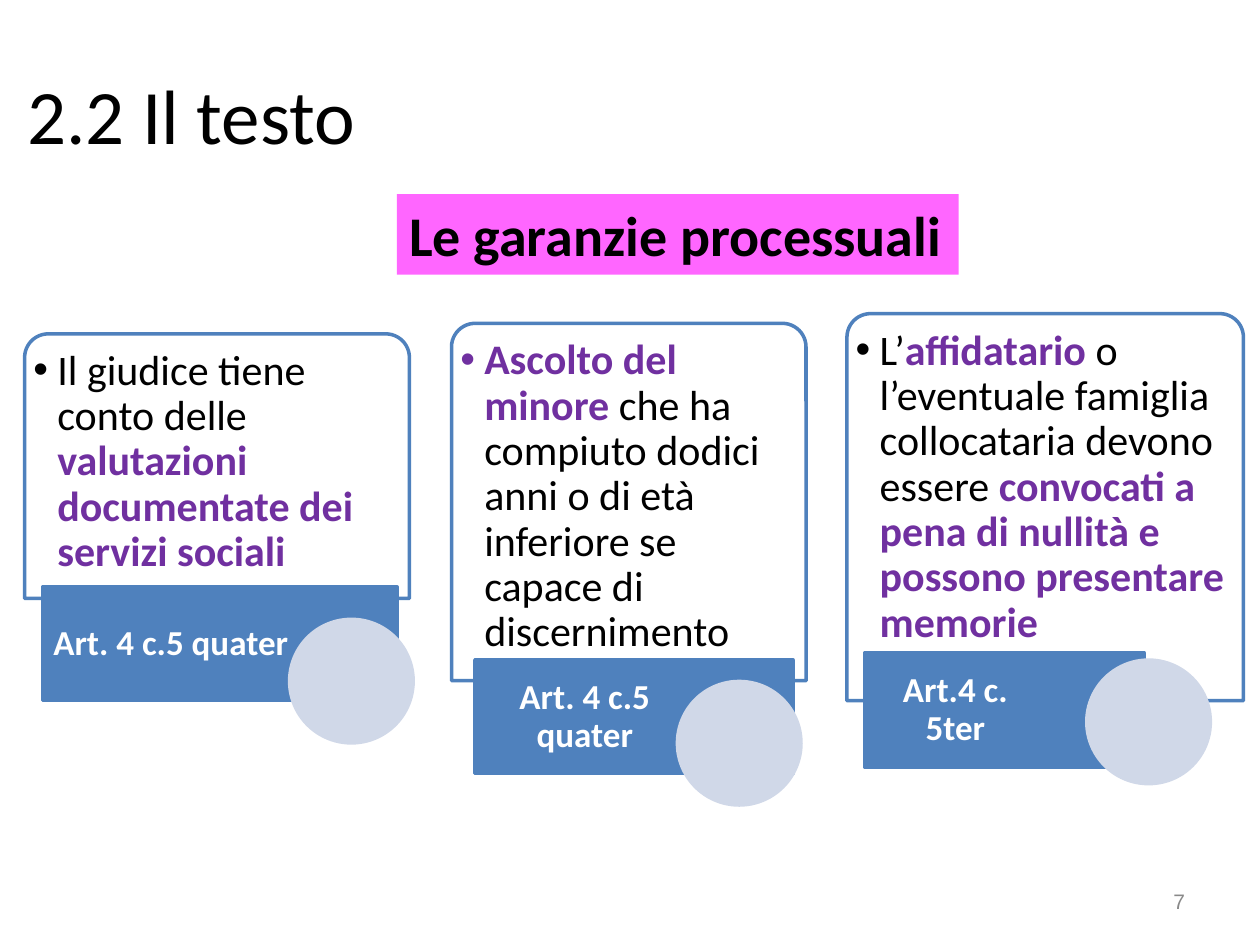
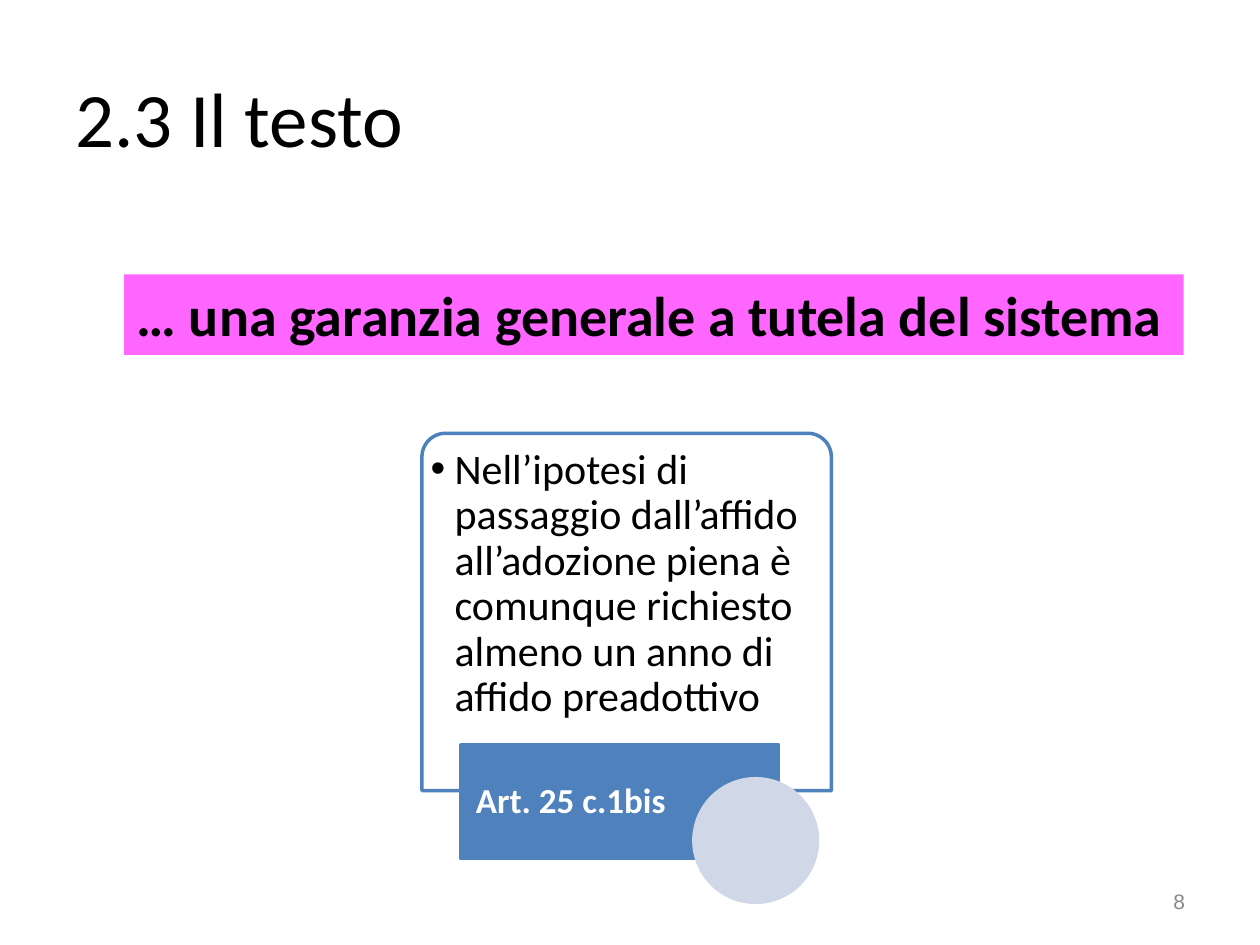
from lxml import etree
from pptx import Presentation
from pptx.dml.color import RGBColor
from pptx.enum import shapes, text
from pptx.oxml import ns
from pptx.util import Pt

BLACK, WHITE, GREY = "000000", "FFFFFF", "898989"
BLUE, PALE, PURPLE, PINK = "4F81BD", "D0D8E8", "7030A0", "FF66FF"

SLIDES = [
    {
        "title": "2.2 Il testo", "title_at": (8.6, 20.2), "number": "7",
        "heading": "Le garanzie processuali", "heading_at": (226.8, 110.9, 321.1, 46),
        "cards": [
            {"at": (14.1, 190.8, 219.9, 151.2),
             "body": [("Il giudice tiene conto delle ", False),
                      ("valutazioni documentate dei servizi sociali", True)],
             "article": "Art. 4 c.5 quater", "article_at": (24.3, 335.4, 202.7),
             "disc_at": (165.5, 353.9)},
            {"at": (258, 184.8, 202.6, 204.2),
             "body": [("Ascolto del minore ", True),
                      ("che ha compiuto dodici anni o di età inferiore "
                       "se capace di discernimento", False)],
             "article": "Art. 4 c.5 quater", "article_at": (271.3, 377.1, 181.8),
             "disc_at": (387.1, 389.4)},
            {"at": (484, 179.2, 226.6, 221.2),
             "body": [("L’", False), ("affidatario", True),
                      (" o l’eventuale famiglia collocataria devono essere ", False),
                      ("convocati a pena di nullità e possono presentare memorie", True)],
             "article": "Art.4 c. 5ter", "article_at": (494, 373.2, 160),
             "disc_at": (621, 377.2)},
        ],
    },
    {
        "title": "2.3 Il testo", "title_at": (36, 21.6), "number": "8",
        "heading": "… una garanzia generale a tutela del sistema",
        "heading_at": (70.9, 156.8, 605.5, 46),
        "cards": [
            {"at": (241.1, 247.6, 234, 204.2),
             "body": [("Nell’ipotesi di passaggio dall’affido all’adozione piena è "
                       "comunque richiesto almeno un anno di affido preadottivo", False)],
             "article": "Art. 25 c.1bis", "article_at": (263.5, 425.6, 181.4),
             "disc_at": (396.5, 445)},
        ],
    },
]

TITLE_SIZE = (648, 90)
NUMBER_AT = (516.2, 500.4, 168, 28.8)
ARTICLE_HEIGHT, DISC = 65, 70.6
RADIUS = 13.5
INDENT = 13.7


def rgb(color):
    return RGBColor.from_string(color)


def style(run, size, color, bold=False, face="Calibri"):
    run.font.size, run.font.bold, run.font.name = Pt(size), bold, face
    run.font.color.rgb = rgb(color)


def place(slide, kind, box, fill, line=None):
    shape = slide.shapes.add_shape(kind, *map(Pt, box))
    shape.shadow.inherit = False
    shape.fill.solid()
    shape.fill.fore_color.rgb = rgb(fill)
    if line:
        shape.line.color.rgb, shape.line.width = rgb(line), Pt(2)
    else:
        shape.line.fill.background()
    return shape


def set_frame(shape, anchor, insets):
    frame = shape.text_frame
    frame.word_wrap, frame.vertical_anchor = True, anchor
    (frame.margin_left, frame.margin_top,
     frame.margin_right, frame.margin_bottom) = map(Pt, insets)
    return frame


def write(frame, words, align, *look, **more):
    frame.text = words
    line = frame.paragraphs[0]
    line.alignment = align
    style(line.runs[0], *look, **more)
    return line


def add_bullet(paragraph):
    props = paragraph._p.get_or_add_pPr()
    props.set("marL", str(Pt(INDENT)))
    props.set("indent", str(-Pt(INDENT)))
    etree.SubElement(props, ns.qn("a:buFont")).set("typeface", "Arial")
    etree.SubElement(props, ns.qn("a:buChar")).set("char", "•")


def add_card(slide, card):
    panel = place(slide, shapes.MSO_SHAPE.ROUND_2_SAME_RECTANGLE, card["at"], WHITE, BLUE)
    panel.adjustments[0] = RADIUS / min(card["at"][2:])
    tuck = 0.29 * RADIUS
    body = set_frame(panel, text.MSO_ANCHOR.TOP, (5 - tuck, 8.6 - tuck, 5 - tuck, 2)).paragraphs[0]
    body.alignment, body.line_spacing = text.PP_ALIGN.LEFT, 0.9
    add_bullet(body)
    for words, strong in card["body"]:
        run = body.add_run()
        run.text = words
        style(run, 24, PURPLE if strong else BLACK, strong)

    band = place(slide, shapes.MSO_SHAPE.RECTANGLE, (*card["article_at"], ARTICLE_HEIGHT), BLUE, BLUE)
    frame = set_frame(band, text.MSO_ANCHOR.MIDDLE, (5, 0, 61, 0))
    write(frame, card["article"], text.PP_ALIGN.CENTER, 20, WHITE, True).line_spacing = 0.9
    place(slide, shapes.MSO_SHAPE.OVAL, (*card["disc_at"], DISC, DISC), PALE, PALE)


def add_slide(prs, content):
    slide = prs.slides.add_slide(prs.slide_layouts[5])
    title = slide.shapes.title
    title.left, title.top, title.width, title.height = map(Pt, content["title_at"] + TITLE_SIZE)
    title.text_frame.vertical_anchor = text.MSO_ANCHOR.MIDDLE
    write(title.text_frame, content["title"], text.PP_ALIGN.LEFT, 44, BLACK)

    heading = place(slide, shapes.MSO_SHAPE.RECTANGLE, content["heading_at"], PINK)
    frame = set_frame(heading, text.MSO_ANCHOR.TOP, (7.2, 3.6, 7.2, 3.6))
    frame.word_wrap = False
    write(frame, content["heading"], text.PP_ALIGN.LEFT, 32, BLACK, True)

    for card in content["cards"]:
        add_card(slide, card)

    number = slide.shapes.add_textbox(*map(Pt, NUMBER_AT))
    frame = set_frame(number, text.MSO_ANCHOR.MIDDLE, (7.2, 3.6, 7.2, 3.6))
    write(frame, content["number"], text.PP_ALIGN.RIGHT, 12, GREY, face="Arial")


def main():
    prs = Presentation()
    prs.slide_width, prs.slide_height = Pt(720), Pt(540)
    for content in SLIDES:
        add_slide(prs, content)
    prs.save("out.pptx")


if __name__ == "__main__":
    main()
